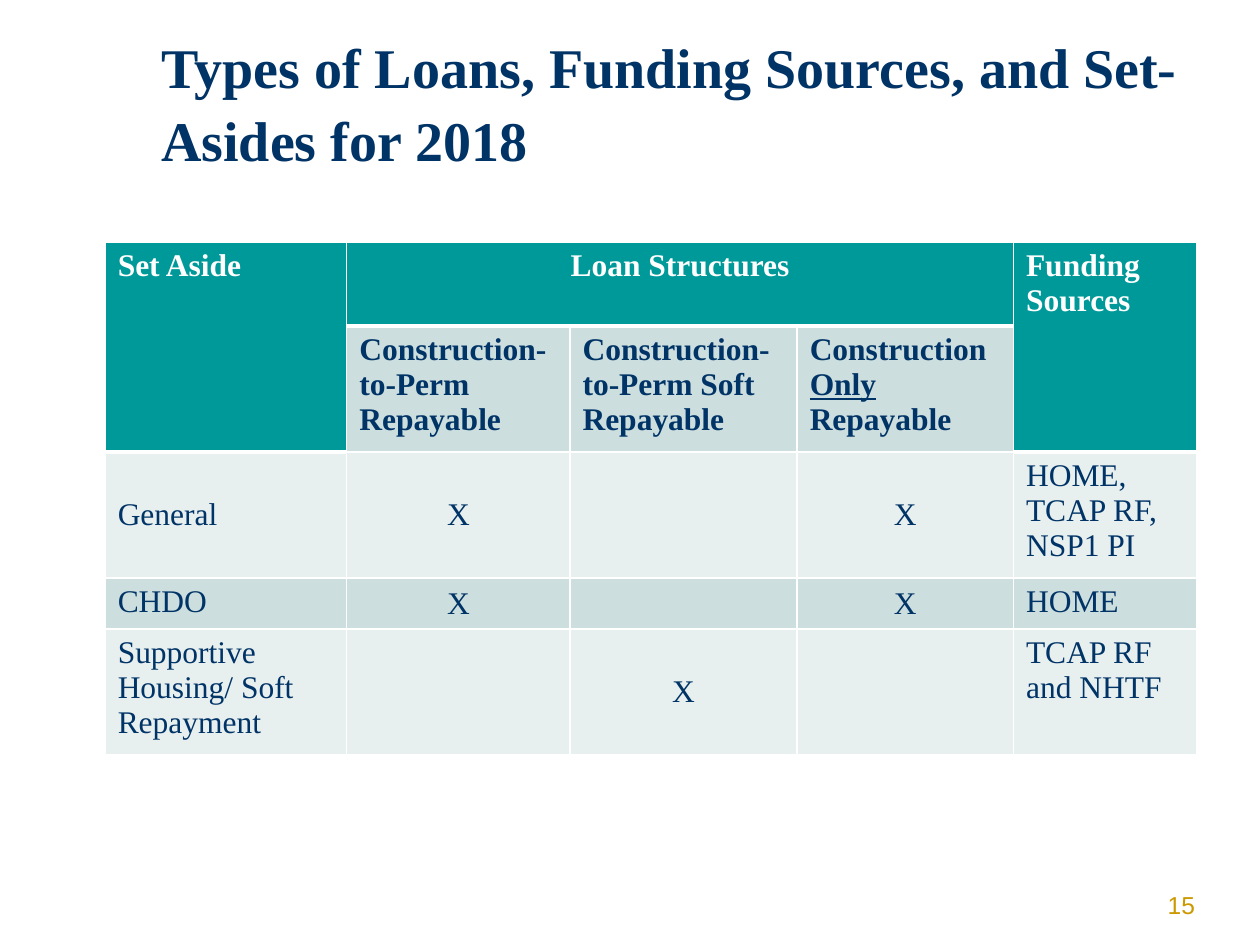
from lxml import etree
from pptx import Presentation
from pptx import util as u
from pptx.dml import color
from pptx.enum import text
from pptx.oxml import ns

COLORS = {
    "navy": "003366",
    "teal": "009999",
    "mid": "CCDEDE",
    "light": "E7EFEF",
    "white": "FFFFFF",
    "gold": "CC9900",
}
SERIF = "Times New Roman"
COLUMN_WIDTHS = [4.87, 4.5, 4.58, 4.36, 3.7]
ROW_HEIGHTS = [1.69, 2.35, 2.35, 1.03, 2.35]
ROW_FILLS = ["teal", "mid", "light", "mid", "light"]
ROWS = [
    ["Set Aside", "Loan Structures", "", "", "Funding Sources"],
    ["", "Construction-to-Perm Repayable", "Construction-to-Perm Soft Repayable",
     ["Construction ", "Only", " Repayable"], ""],
    ["General", "X", "", "X", "HOME, TCAP RF, NSP1 PI"],
    ["CHDO", "X", "", "X", "HOME"],
    ["Supportive Housing/ Soft Repayment", "", "X", "", "TCAP RF and NHTF"],
]
MERGES = [((0, 0), (1, 0)), ((0, 1), (0, 3)), ((0, 4), (1, 4))]
LEFT, RIGHT, CENTER = text.PP_ALIGN.LEFT, text.PP_ALIGN.RIGHT, text.PP_ALIGN.CENTER
TOP, MIDDLE, BOTTOM = text.MSO_ANCHOR.TOP, text.MSO_ANCHOR.MIDDLE, text.MSO_ANCHOR.BOTTOM


def rgb(name):
    return color.RGBColor.from_string(COLORS[name])


def add_run(paragraph, words, size, color_name, font=SERIF, bold=False, underline=False):
    run = paragraph.add_run()
    run.text = words
    run.font.name = font
    run.font.size = u.Pt(size)
    run.font.bold = bold
    run.font.underline = underline
    run.font.color.rgb = rgb(color_name)


def add_text_box(slide, box, anchor, side_margin):
    frame = slide.shapes.add_textbox(*[u.Cm(value) for value in box]).text_frame
    frame.word_wrap = True
    frame.vertical_anchor = anchor
    frame.margin_left = frame.margin_right = u.Cm(side_margin)
    return frame.paragraphs[0]


def set_borders(cell, bottom_width):
    properties = cell._tc.get_or_add_tcPr()
    for side, width in (("L", 1), ("R", 1), ("T", 1), ("B", bottom_width)):
        line = etree.SubElement(properties, ns.qn(f"a:ln{side}"), w=str(u.Pt(width)))
        fill = etree.SubElement(line, ns.qn("a:solidFill"))
        etree.SubElement(fill, ns.qn("a:srgbClr"), val=COLORS["white"])


def fill_cell(cell, row, column, content):
    is_header = row == 0 or (row == 1 and column in (0, 4))
    set_borders(cell, 3 if is_header else 1)
    cell.fill.solid()
    cell.fill.fore_color.rgb = rgb("teal" if is_header else ROW_FILLS[row])
    centered = content in ("X", "Loan Structures")
    cell.vertical_anchor = MIDDLE if content in ("X", "General") else TOP
    paragraph = cell.text_frame.paragraphs[0]
    paragraph.alignment = CENTER if centered else LEFT
    parts = [content] if isinstance(content, str) else content
    for words in filter(None, parts):
        add_run(paragraph, words, 18, "white" if is_header else "navy",
                bold=row < 2, underline=words == "Only")


def add_loan_table(slide):
    frame = slide.shapes.add_table(
        len(ROWS), len(COLUMN_WIDTHS), u.Cm(2.12), u.Cm(4.88),
        u.Cm(sum(COLUMN_WIDTHS)), u.Cm(sum(ROW_HEIGHTS)))
    table = frame.table
    for column, width in zip(table.columns, COLUMN_WIDTHS):
        column.width = u.Cm(width)
    for row, height in zip(table.rows, ROW_HEIGHTS):
        row.height = u.Cm(height)
    for row, contents in enumerate(ROWS):
        for column, content in enumerate(contents):
            fill_cell(table.cell(row, column), row, column, content)
    for start, end in MERGES:
        table.cell(*start).merge(table.cell(*end))


def main():
    presentation = Presentation()
    presentation.slide_width, presentation.slide_height = u.Cm(25.4), u.Cm(19.05)
    slide = presentation.slides.add_slide(presentation.slide_layouts[6])
    title = add_text_box(slide, (2.75, 0.43, 21.6, 3.18), MIDDLE, 0.5)
    title.line_spacing = 1.08
    add_run(title, "Types of Loans, Funding Sources, and Set-Asides for 2018",
            32, "navy", bold=True)
    add_loan_table(slide)
    number = add_text_box(slide, (18.42, 17.78, 5.92, 0.89), BOTTOM, 0.25)
    number.alignment = RIGHT
    add_run(number, "15", 14, "gold", font="Arial")
    presentation.save("out.pptx")


if __name__ == "__main__":
    main()
